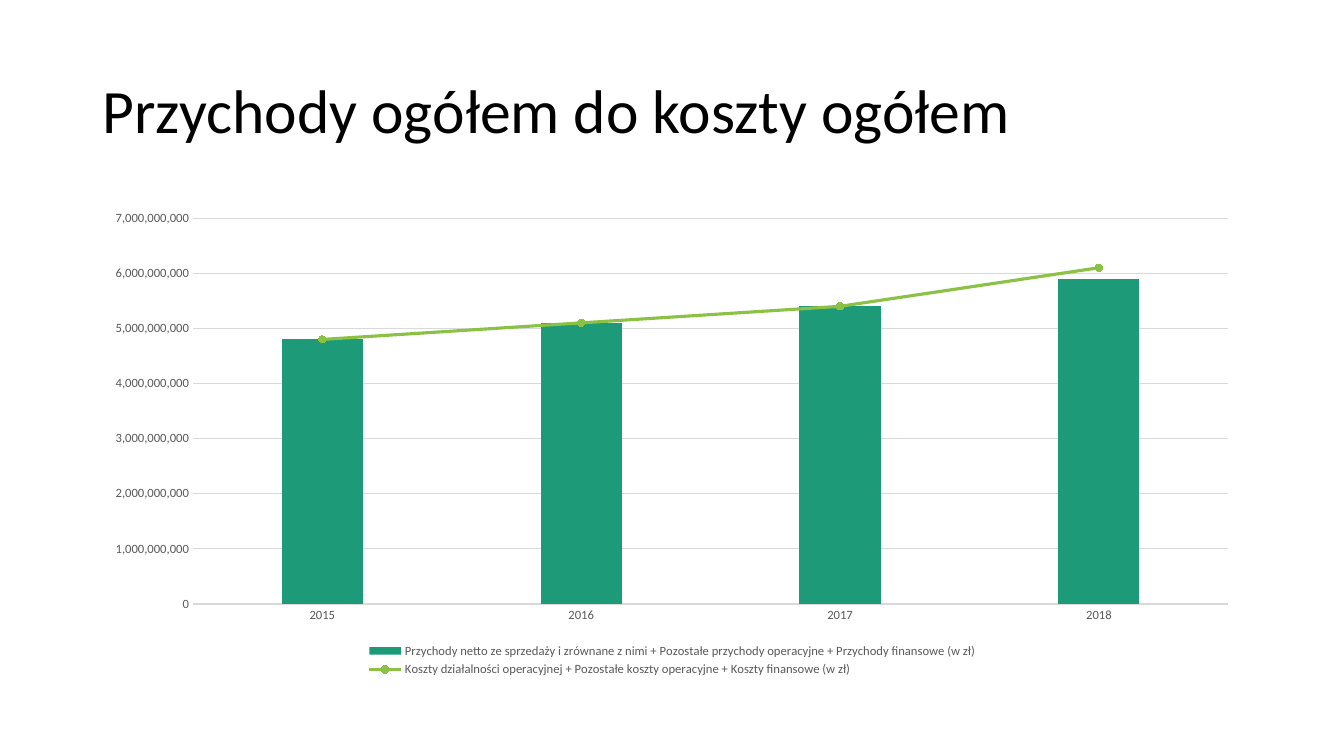
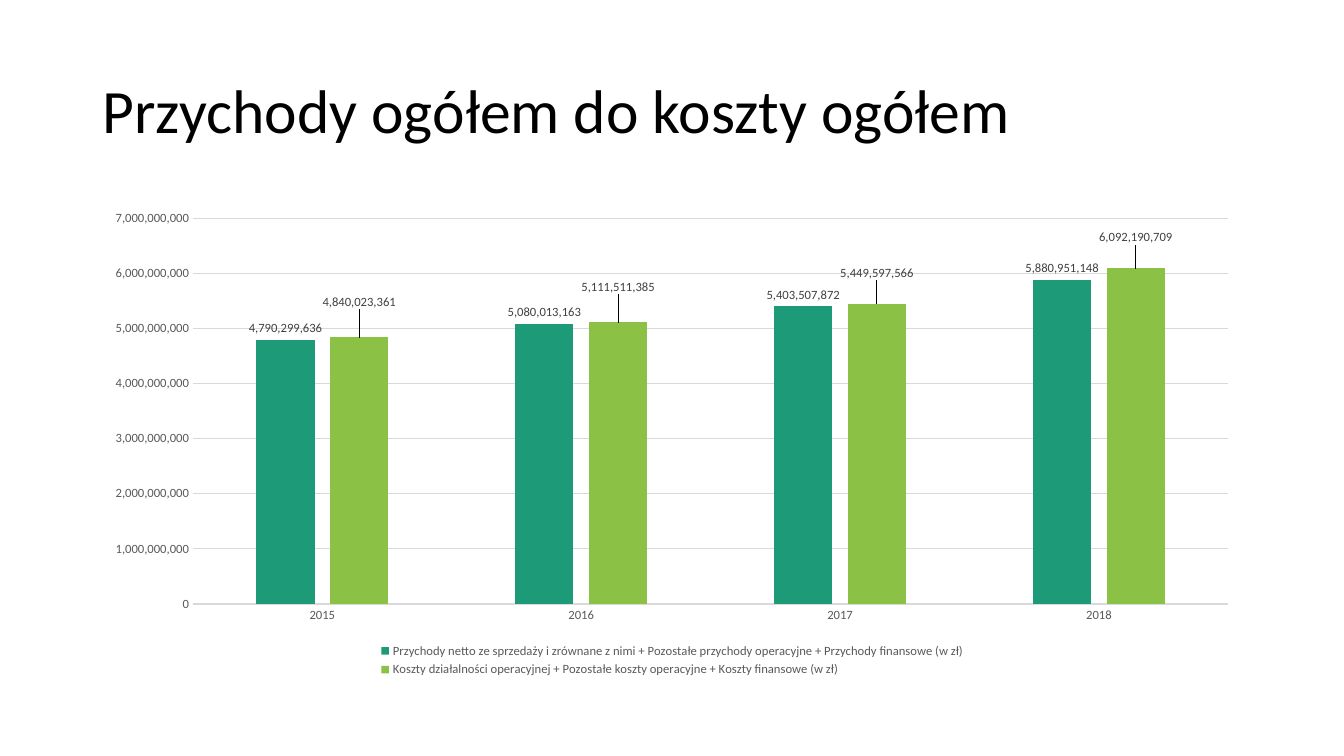
import pptx
import pptx.chart.data
import pptx.dml.color
import pptx.enum.chart
import pptx.enum.text
import pptx.oxml
import pptx.oxml.ns
import pptx.util

Cm = pptx.util.Cm
Pt = pptx.util.Pt

FONT = "Calibri"
COLORS = {
    "title": "000000",
    "axis_text": "595959",
    "label_text": "404040",
    "grid": "D9D9D9",
    "revenue": "1D9A78",
    "costs": "8BC145",
}
TITLE = "Przychody ogółem do koszty ogółem"
TITLE_BOX = (Cm(2.33), Cm(1.01), Cm(29.21), Cm(3.68))
CHART_BOX = (Cm(2.33), Cm(5.07), Cm(29.21), Cm(12.09))
NUMBER_FORMAT = "#,##0"
YEARS = ("2015", "2016", "2017", "2018")
SERIES = (
    (
        "Przychody netto ze sprzedaży i zrównane z nimi + Pozostałe przychody operacyjne"
        " + Przychody finansowe (w zł)",
        (4790299636, 5080013163, 5403507872, 5880951148),
    ),
    (
        "Koszty działalności operacyjnej + Pozostałe koszty operacyjne"
        " + Koszty finansowe (w zł)",
        (4840023361, 5111511385, 5449597566, 6092190709),
    ),
)
COST_LABEL_SHIFTS = (-0.05, -0.05, -0.04, -0.04)


def rgb(name):
    return pptx.dml.color.RGBColor.from_string(COLORS[name])


def set_font(font, size, color):
    font.name = FONT
    font.size = Pt(size)
    font.color.rgb = rgb(color)


def fill_solid(fill, color):
    fill.solid()
    fill.fore_color.rgb = rgb(color)


def set_line(line, color, width):
    line.color.rgb = rgb(color)
    line.width = Pt(width)


def add_title(slide, box):
    title = slide.shapes.title
    title.left, title.top, title.width, title.height = box
    title.text_frame.text = TITLE
    title.text_frame.vertical_anchor = pptx.enum.text.MSO_ANCHOR.MIDDLE
    paragraph = title.text_frame.paragraphs[0]
    paragraph.alignment = pptx.enum.text.PP_ALIGN.LEFT
    paragraph.line_spacing = 0.9
    set_font(paragraph.font, 44, "title")


def format_axes(chart):
    for axis in (chart.category_axis, chart.value_axis):
        axis.major_tick_mark = pptx.enum.chart.XL_TICK_MARK.NONE
        axis.minor_tick_mark = pptx.enum.chart.XL_TICK_MARK.NONE
        set_font(axis.tick_labels.font, 9, "axis_text")
    set_line(chart.category_axis.format.line, "grid", 0.75)
    value_axis = chart.value_axis
    value_axis.minimum_scale = 0
    value_axis.maximum_scale = 7_000_000_000
    value_axis.major_unit = 1_000_000_000
    value_axis.format.line.fill.background()
    value_axis.has_major_gridlines = True
    set_line(value_axis.major_gridlines.format.line, "grid", 0.75)
    value_axis.tick_labels.number_format = NUMBER_FORMAT
    value_axis.tick_labels.number_format_is_linked = False


def add_column_chart(slide, box, rounding):
    data = pptx.chart.data.CategoryChartData(number_format=NUMBER_FORMAT)
    data.categories = YEARS
    for name, values in SERIES:
        data.add_series(name, [round(value, rounding) for value in values])
    chart_type = pptx.enum.chart.XL_CHART_TYPE.COLUMN_CLUSTERED
    chart = slide.shapes.add_chart(chart_type, *box, data).chart
    set_font(chart.font, 10, "title")
    chart.has_title = False
    chart.has_legend = True
    chart.legend.position = pptx.enum.chart.XL_LEGEND_POSITION.BOTTOM
    chart.legend.include_in_layout = False
    set_font(chart.legend.font, 9, "axis_text")
    format_axes(chart)
    plot = chart.plots[0]
    plot.gap_width = 219
    plot.vary_by_categories = False
    for series, color in zip(plot.series, ("revenue", "costs")):
        fill_solid(series.format.fill, color)
        series.invert_if_negative = False
    return chart


def turn_costs_into_line(chart):
    bar_chart = chart.plots[0]._element
    costs = chart.plots[0].series[1]._element
    for element in costs.xpath("c:invertIfNegative | c:spPr"):
        costs.remove(element)
    line_chart = pptx.oxml.parse_xml(
        f'<c:lineChart {pptx.oxml.ns.nsdecls("c")}>'
        '<c:grouping val="stacked"/><c:varyColors val="0"/><c:marker val="1"/>'
        "</c:lineChart>"
    )
    line_chart.insert(2, costs)
    for axis_id in bar_chart.xpath("c:axId"):
        reference = pptx.oxml.parse_xml(
            f'<c:axId {pptx.oxml.ns.nsdecls("c")} val="{axis_id.get("val")}"/>'
        )
        line_chart.append(reference)
    bar_chart.addnext(line_chart)
    series = chart.plots[1].series[0]
    series.smooth = False
    set_line(series.format.line, "costs", 2.25)
    series.marker.style = pptx.enum.chart.XL_MARKER_STYLE.CIRCLE
    series.marker.size = 5
    fill_solid(series.marker.format.fill, "costs")
    set_line(series.marker.format.line, "costs", 0.75)


def add_value_labels(series):
    labels = series.data_labels
    labels.show_value = True
    labels.number_format = NUMBER_FORMAT
    labels.number_format_is_linked = False
    labels.position = pptx.enum.chart.XL_LABEL_POSITION.OUTSIDE_END
    set_font(labels.font, 9, "label_text")


def raise_labels(series, shifts):
    for index, shift in enumerate(shifts):
        label = series.points[index].data_label
        label.position = pptx.enum.chart.XL_LABEL_POSITION.OUTSIDE_END
        set_font(label.font, 9, "label_text")
        layout = pptx.oxml.parse_xml(
            f'<c:layout {pptx.oxml.ns.nsdecls("c")}><c:manualLayout>'
            f'<c:x val="0"/><c:y val="{shift}"/></c:manualLayout></c:layout>'
        )
        position = series._element.xpath(f"c:dLbls/c:dLbl/c:idx[@val='{index}']")[0]
        position.addnext(layout)


def hide_leader_lines(series):
    extension = pptx.oxml.parse_xml(
        f'<c:extLst {pptx.oxml.ns.nsdecls("c")}>'
        '<c:ext uri="{CE6537A1-D6FC-4f65-9D91-7224C49458BB}"'
        ' xmlns:c15="http://schemas.microsoft.com/office/drawing/2012/chart">'
        '<c15:showLeaderLines val="0"/></c:ext></c:extLst>'
    )
    series._element.xpath("c:dLbls")[0].append(extension)


def add_chart_slide(presentation, rounding):
    slide = presentation.slides.add_slide(presentation.slide_layouts[5])
    add_title(slide, TITLE_BOX)
    return add_column_chart(slide, CHART_BOX, rounding)


def add_trend_slide(presentation):
    turn_costs_into_line(add_chart_slide(presentation, rounding=-8))


def add_comparison_slide(presentation):
    plot = add_chart_slide(presentation, rounding=0).plots[0]
    plot.overlap = -27
    for series in plot.series:
        add_value_labels(series)
    costs = plot.series[1]
    raise_labels(costs, COST_LABEL_SHIFTS)
    hide_leader_lines(costs)


def main():
    presentation = pptx.Presentation()
    presentation.slide_width = Cm(33.87)
    presentation.slide_height = Cm(19.05)
    add_trend_slide(presentation)
    add_comparison_slide(presentation)
    presentation.save("out.pptx")


if __name__ == "__main__":
    main()
